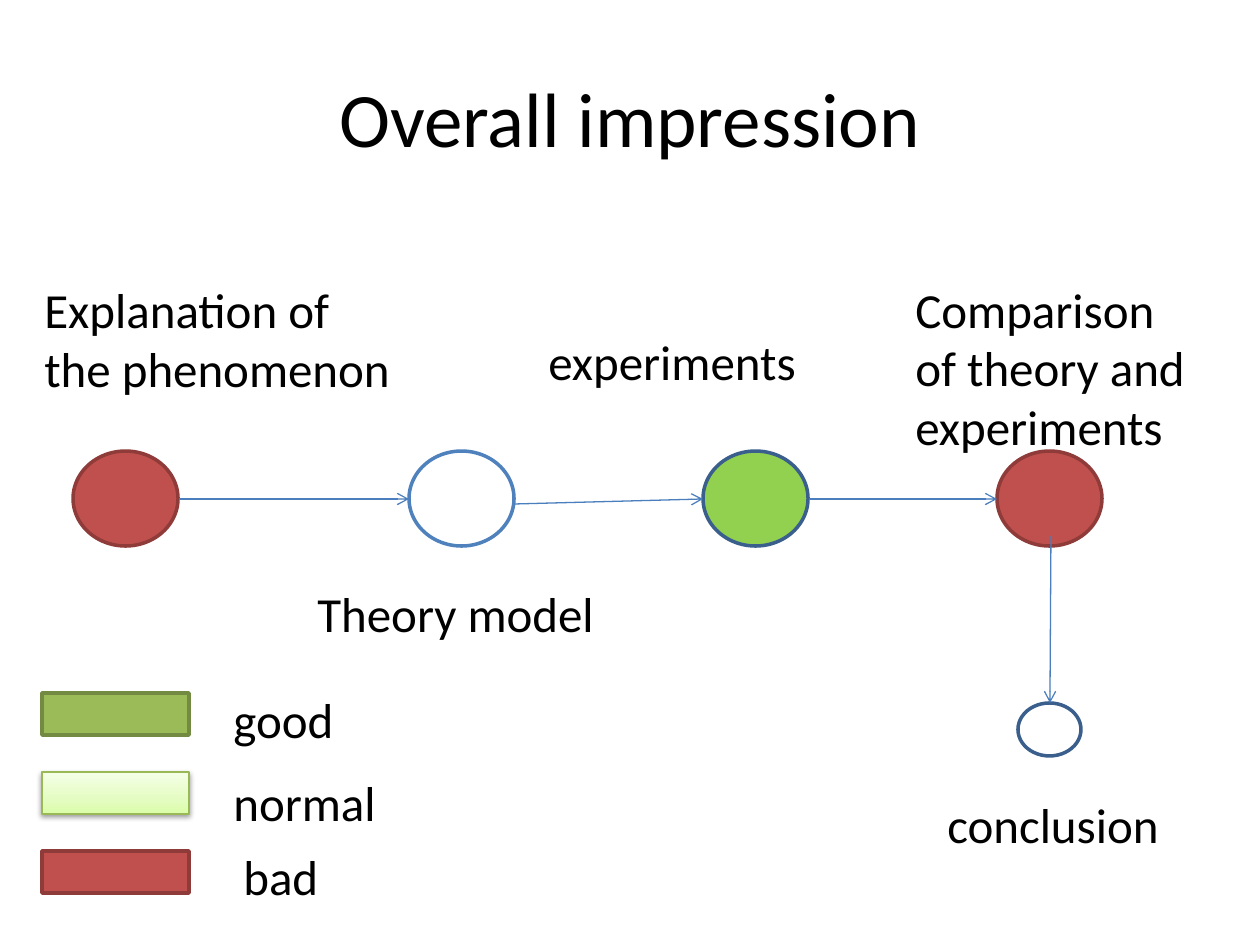
from copy import deepcopy

from lxml import etree
from pptx import Presentation
from pptx.dml.color import RGBColor
from pptx.enum.shapes import MSO_CONNECTOR, MSO_SHAPE
from pptx.enum.text import MSO_ANCHOR, MSO_AUTO_SIZE, PP_ALIGN
from pptx.oxml import parse_xml
from pptx.oxml.ns import nsdecls, qn
from pptx.util import Emu, Pt

PX = 914400 / 126
BAD, BAD_EDGE = "C0504D", "8E3B39"
BLUE_EDGE = "3A5F8C"


def px(*lengths):
    return [Emu(round(length * PX)) for length in lengths]


def rgb(hex_color):
    return RGBColor.from_string(hex_color)


prs = Presentation()
prs.slide_width, prs.slide_height = px(1260, 945)
slide = prs.slides.add_slide(prs.slide_layouts[6])
shapes = slide.shapes

# Stages of the report and the colour keys
OVAL, RECT = MSO_SHAPE.OVAL, MSO_SHAPE.RECTANGLE
marks = [
    (OVAL, 73, 451, 105, 95, BAD, BAD_EDGE),
    (OVAL, 409, 451, 105, 95, "FFFFFF", "4F81BD"),
    (OVAL, 703, 451, 105, 95, "92D050", BLUE_EDGE),
    (OVAL, 997, 451, 105, 95, BAD, BAD_EDGE),
    (OVAL, 1018, 703, 63, 53, "FFFFFF", BLUE_EDGE),
    (RECT, 42, 693, 147, 42, "9BBB59", "738A42"),
    (RECT, 42, 851, 147, 42, BAD, BAD_EDGE),
]
for kind, left, top, width, height, fill, edge in marks:
    mark = shapes.add_shape(kind, *px(left, top, width, height))
    mark.shadow.inherit = False
    mark.fill.solid()
    mark.fill.fore_color.rgb = rgb(fill)
    mark.line.color.rgb = rgb(edge)
    mark.line.width = Pt(2)

# The "normal" key has a gradient and a soft shadow
normal_key = shapes.add_shape(RECT, *px(42, 772, 147, 42))
normal_key.line.color.rgb = rgb("98B955")
normal_key.line.width = Pt(0.75)
normal_key.fill.gradient()
normal_key.fill.gradient_angle = 90
stop_list = normal_key._element.spPr.find(".//" + qn("a:gsLst"))
stop_list.insert(1, deepcopy(stop_list[0]))
greens = [(0, "DAFDA7"), (0.35, "E4FCC2"), (1, "F5FFE7")]
for stop, (position, green) in zip(normal_key.fill.gradient_stops, greens):
    stop.position = position
    stop.color.rgb = rgb(green)
normal_key._element.spPr.append(parse_xml(
    f'<a:effectLst {nsdecls("a")}>'
    f'<a:outerShdw blurRad="{Pt(3.1)}" dist="{Pt(1.6)}" dir="5400000" rotWithShape="0">'
    '<a:srgbClr val="000000"><a:alpha val="38000"/></a:srgbClr>'
    '</a:outerShdw></a:effectLst>'))

# Arrows from stage to stage
steps = [
    (179, 499, 409, 499),
    (514, 504, 703, 499),
    (809, 499, 997, 499),
    (1051, 536, 1050, 703),
]
for ends in steps:
    arrow = shapes.add_connector(MSO_CONNECTOR.STRAIGHT, *px(*ends))
    arrow.line.color.rgb = rgb("4B7EBC")
    arrow.line.width = Pt(0.75)
    etree.SubElement(arrow.line._get_or_add_ln(), qn("a:tailEnd"), type="arrow")
    etree.SubElement(arrow._element.spPr, qn("a:effectLst"))

# Title and labels
TITLE = "Overall impression"
captions = [
    (TITLE, 63, 38, 1134, 158),
    ("Explanation of the phenomenon", 32, 273, 378, 131),
    ("Theory model", 305, 577, 357, 72),
    ("experiments", 536, 325, 284, 72),
    ("Comparison of theory and experiments", 903, 273, 315, 190),
    ("conclusion", 935, 788, 252, 72),
    ("good", 221, 683, 158, 72),
    ("normal", 221, 766, 199, 72),
    ("bad", 231, 840, 199, 72),
]
for wording, *box in captions:
    frame = shapes.add_textbox(*px(*box)).text_frame
    frame.word_wrap = True
    paragraph = frame.paragraphs[0]
    run = paragraph.add_run()
    run.text = wording
    run.font.name = "Calibri"
    run.font.color.rgb = rgb("000000")
    if wording == TITLE:
        run.font.size = Pt(44)
        paragraph.alignment = PP_ALIGN.CENTER
        frame.vertical_anchor = MSO_ANCHOR.MIDDLE
    else:
        run.font.size = Pt(28)
        frame.auto_size = MSO_AUTO_SIZE.SHAPE_TO_FIT_TEXT

prs.save("out.pptx")
